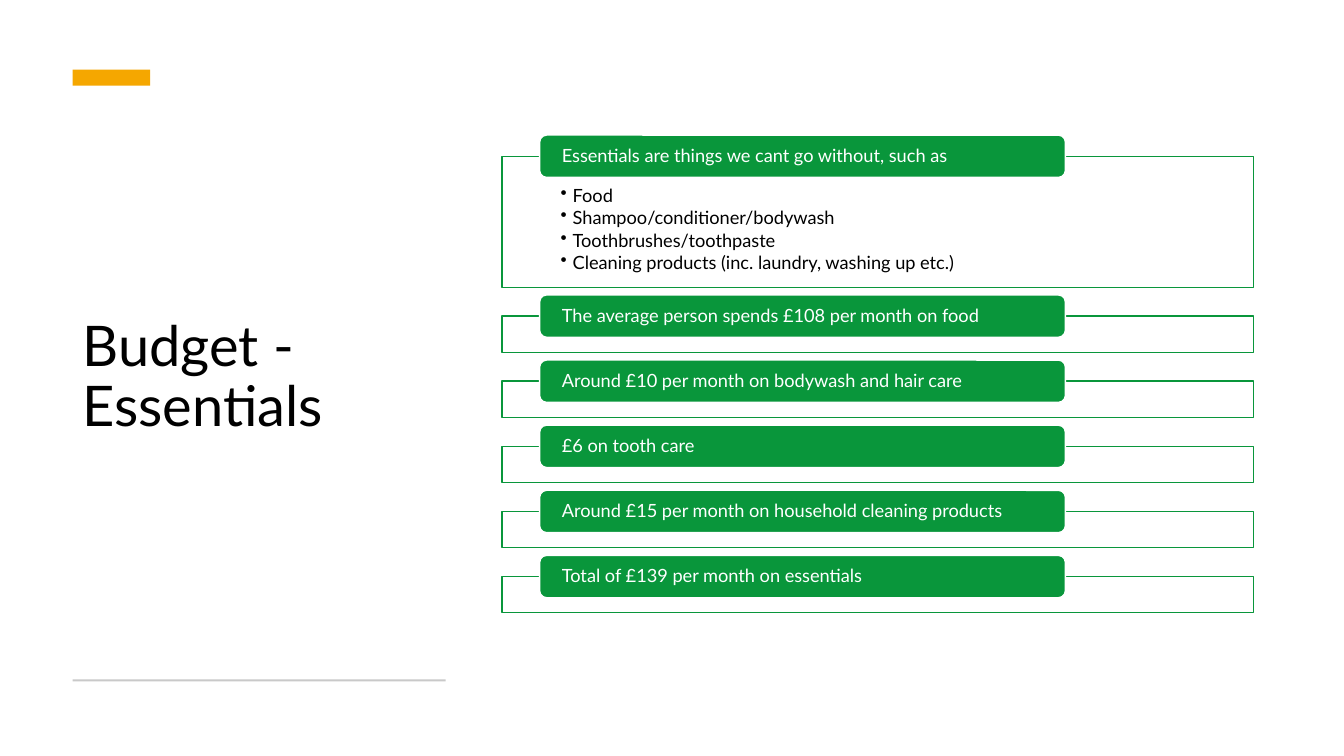
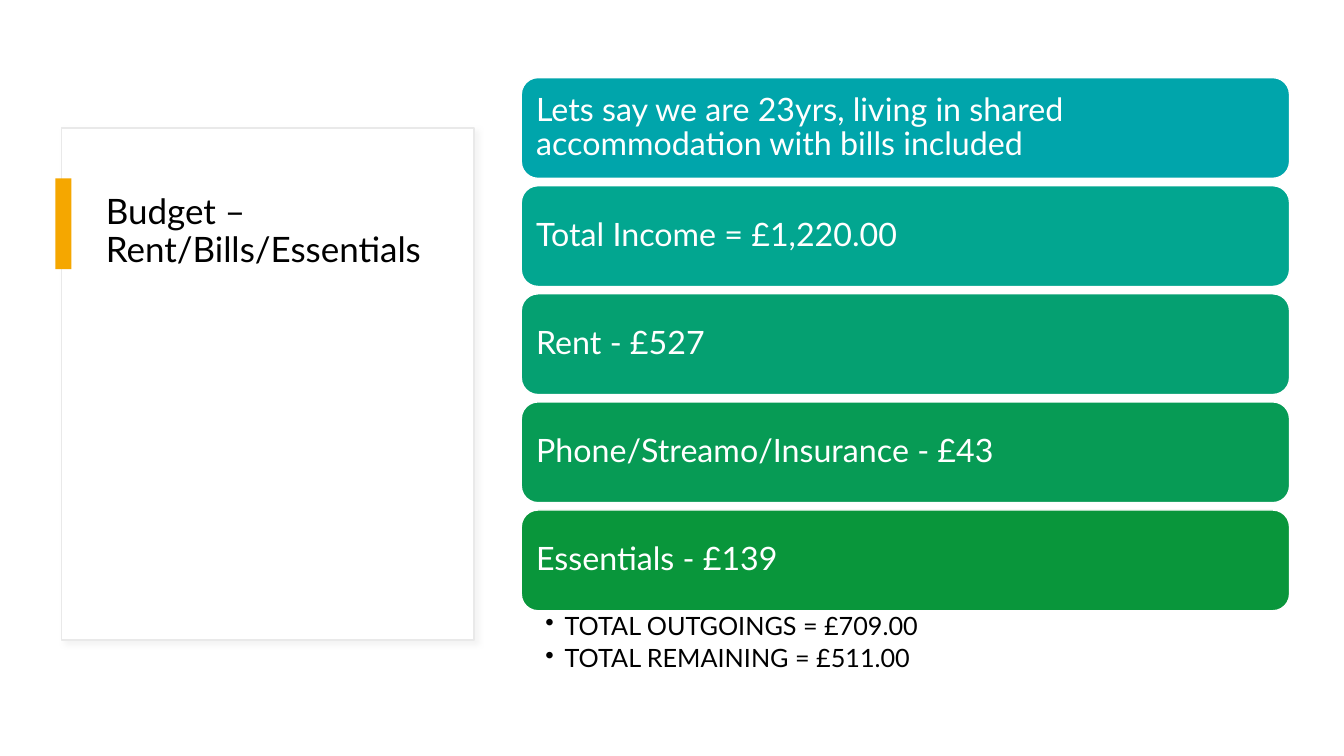
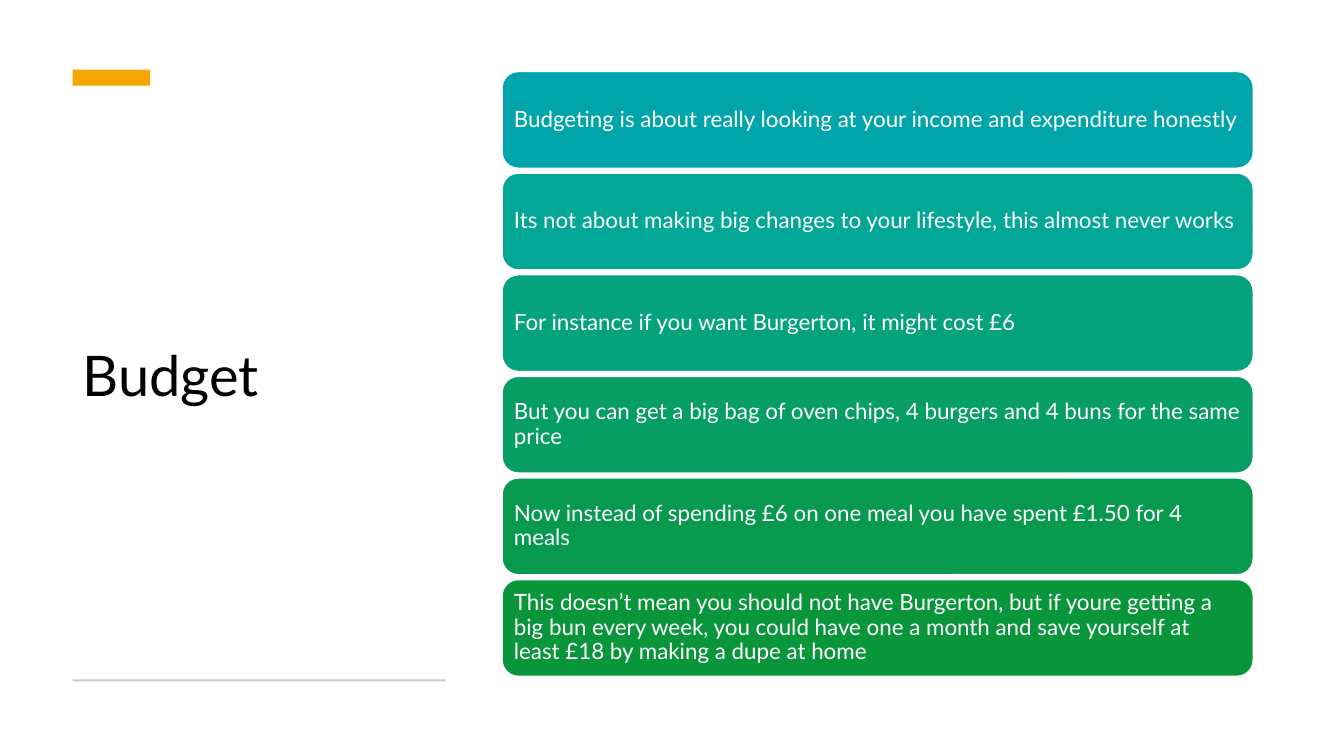
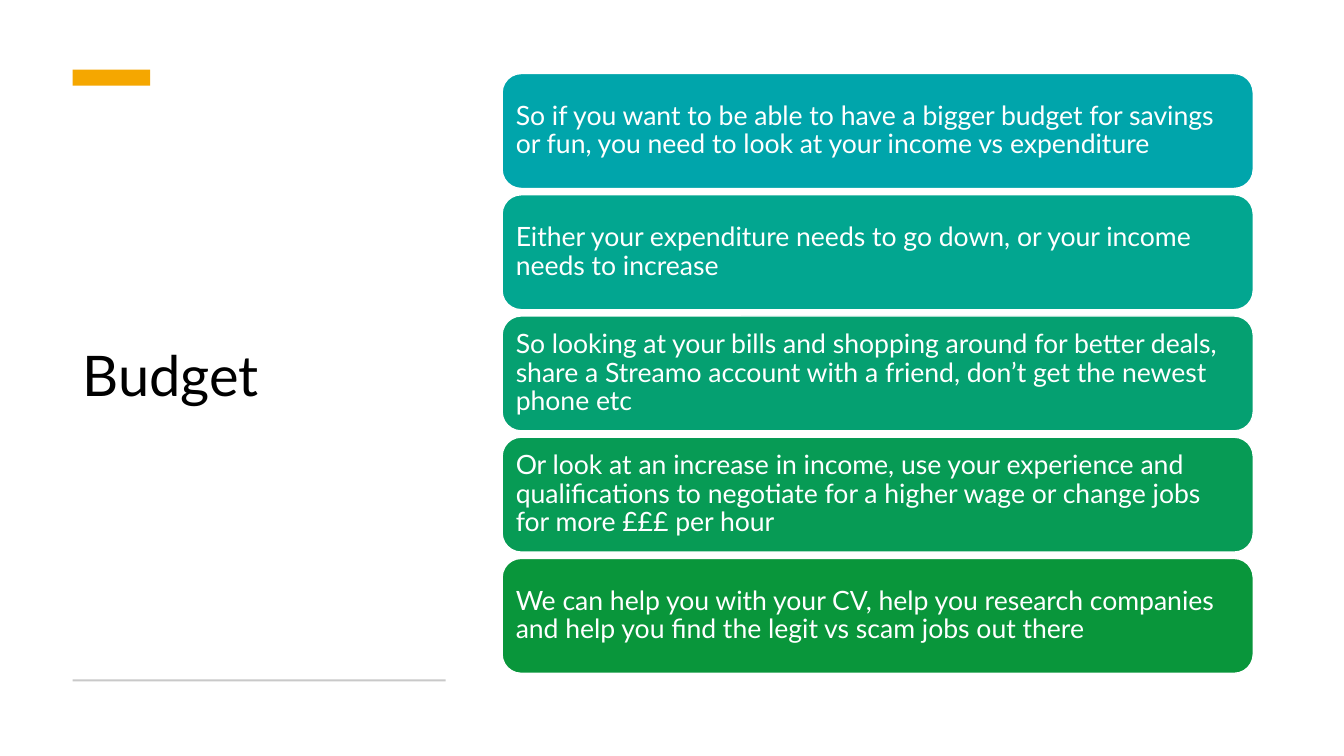
from colorsys import hls_to_rgb, rgb_to_hls
from dataclasses import dataclass

from lxml import etree
from pptx import Presentation
from pptx.dml.color import RGBColor
from pptx.enum.shapes import MSO_SHAPE
from pptx.enum.text import MSO_ANCHOR, MSO_AUTO_SIZE, PP_ALIGN
from pptx.oxml.ns import qn
from pptx.util import Inches, Pt

RECT, ROUNDED = MSO_SHAPE.RECTANGLE, MSO_SHAPE.ROUNDED_RECTANGLE
TOP, MIDDLE = MSO_ANCHOR.TOP, MSO_ANCHOR.MIDDLE
LEFT, NO_AUTOFIT = PP_ALIGN.LEFT, MSO_AUTO_SIZE.NONE
TITLE_ONLY = 5


@dataclass(frozen=True)
class Theme:
    font: str = "Lato"
    ink: str = "000000"
    paper: str = "FFFFFF"
    accent: str = "F5A700"
    rule: str = "C9C9C9"
    frame: str = "E9E9E9"
    shadow: str = "D9D9D9"
    teal: str = "00A5AB"
    green: str = "09963B"
    title_size: int = 40
    side_title_size: int = 25
    tab_size: int = 13
    total_size: int = 18
    leading: float = 0.9
    card_after: float = 0.35  # paragraph gaps are shares of the type size
    detail_after: float = 0.15
    total_after: float = 0.2


THEME = Theme()
SLIDE_WIDTH, SLIDE_HEIGHT = 13.33, 7.5
TITLE_LEFT, TITLE_WIDTH = 0.72, 3.7
BODY_LEFT, BODY_WIDTH = 4.98, 7.45

ESSENTIALS = [
    ("Essentials are things we cant go without, such as", [
        "Food",
        "Shampoo/conditioner/bodywash",
        "Toothbrushes/toothpaste",
        "Cleaning products (inc. laundry, washing up etc.)",
    ]),
    ("The average person spends £108 per month on food", []),
    ("Around £10 per month on bodywash and hair care", []),
    ("£6 on tooth care", []),
    ("Around £15 per month on household cleaning products", []),
    ("Total of £139 per month on essentials", []),
]

MONTH = [
    "Lets say we are 23yrs, living in shared accommodation with bills included",
    "Total Income = £1,220.00",
    "Rent - £527",
    "Phone/Streamo/Insurance - £43",
    "Essentials - £139",
]
TOTALS = ["TOTAL OUTGOINGS = £709.00", "TOTAL REMAINING = £511.00"]

HONEST_LOOK = [
    "Budgeting is about really looking at your income and expenditure honestly",
    "Its not about making big changes to your lifestyle, this almost never works",
    "For instance if you want Burgerton, it might cost £6",
    "But you can get a big bag of oven chips, 4 burgers and 4 buns for the same price",
    "Now instead of spending £6 on one meal you have spent £1.50 for 4 meals",
    "This doesn’t mean you should not have Burgerton, but if youre getting a big bun "
    "every week, you could have one a month and save yourself at least £18 by making "
    "a dupe at home",
]

BIGGER_BUDGET = [
    "So if you want to be able to have a bigger budget for savings or fun, you need to "
    "look at your income vs expenditure",
    "Either your expenditure needs to go down, or your income needs to increase",
    "So looking at your bills and shopping around for better deals, share a Streamo "
    "account with a friend, don’t get the newest phone etc",
    "Or look at an increase in income, use your experience and qualifications to "
    "negotiate for a higher wage or change jobs for more £££ per hour",
    "We can help you with your CV, help you research companies and help you find the "
    "legit vs scam jobs out there",
]


def rgb(colour):
    return RGBColor.from_string(colour)


def write(shape, paragraphs, *, size, color=THEME.ink, anchor=MIDDLE,
          insets=(0.1, 0.05, 0.1, 0.05), after=0, bullet_indent=0):
    """Fill a shape with paragraphs; insets run left, top, right, bottom."""
    frame = shape.text_frame
    frame.word_wrap = True
    frame.auto_size = NO_AUTOFIT
    frame.vertical_anchor = anchor
    (frame.margin_left, frame.margin_top,
     frame.margin_right, frame.margin_bottom) = map(Inches, insets)
    for index, text in enumerate(paragraphs):
        paragraph = frame.add_paragraph() if index else frame.paragraphs[0]
        paragraph.alignment = LEFT
        paragraph.line_spacing = THEME.leading
        paragraph.space_after = Pt(size * after)
        run = paragraph.add_run()
        run.text = text
        run.font.name, run.font.size = THEME.font, Pt(size)
        run.font.color.rgb = rgb(color)
        if bullet_indent:
            properties = paragraph._p.get_or_add_pPr()
            properties.set("marL", str(Inches(bullet_indent)))
            properties.set("indent", str(-Inches(bullet_indent)))
            etree.SubElement(properties, qn("a:buChar"), char="•")


def add_block(slide, box, fill, line=None, kind=RECT):
    block = slide.shapes.add_shape(kind, *map(Inches, box))
    block.shadow.inherit = False
    block.fill.solid()
    block.fill.fore_color.rgb = rgb(fill)
    if line:
        block.line.color.rgb = rgb(line)
        block.line.width = Pt(1)
    else:
        block.line.fill.background()
    return block


def cast_shadow(shape):
    effects = shape._element.spPr.find(qn("a:effectLst"))
    outer = etree.SubElement(effects, qn("a:outerShdw"), blurRad=str(Pt(4)),
                             dist=str(Pt(3)), dir=str(45 * 60000), rotWithShape="0")
    colour = etree.SubElement(outer, qn("a:srgbClr"), val=THEME.shadow)
    etree.SubElement(colour, qn("a:alpha"), val="30000")


def place_title(slide, text, box, size, anchor):
    title = slide.shapes.title
    title.left, title.top, title.width, title.height = map(Inches, box)
    write(title, [text], size=size, anchor=anchor)


def new_slide(deck):
    return deck.slides.add_slide(deck.slide_layouts[TITLE_ONLY])


def add_ruled_slide(deck, title):
    """Slide with a large title between an accent bar and a thin rule."""
    slide = new_slide(deck)
    place_title(slide, title, (TITLE_LEFT, 1.05, TITLE_WIDTH, 5.41),
                THEME.title_size, MIDDLE)
    add_block(slide, (TITLE_LEFT, 0.69, 0.77, 0.16), THEME.accent)
    add_block(slide, (TITLE_LEFT, 6.74, TITLE_WIDTH, 0.02), THEME.rule)
    return slide


def add_framed_slide(deck, title):
    """Slide with a small title inside a shadowed frame."""
    slide = new_slide(deck)
    frame = add_block(slide, (0.61, 1.27, 4.09, 5.08), THEME.paper, THEME.frame)
    cast_shadow(frame)
    slide.shapes._spTree.append(slide.shapes.title._element)
    place_title(slide, title, (0.95, 1.88, 3.39, 3.85), THEME.side_title_size, TOP)
    add_block(slide, (0.55, 1.77, 0.16, 0.9), THEME.accent)
    return slide


def hue_ramp(count):
    """Colours from teal to green in even steps of hue, lightness, saturation."""
    start, end = (rgb_to_hls(*(part / 255 for part in rgb(colour)))
                  for colour in (THEME.teal, THEME.green))
    for step in range(count):
        share = step / (count - 1)
        mixed = hls_to_rgb(*(a + (b - a) * share for a, b in zip(start, end)))
        yield "".join(f"{round(part * 255):02X}" for part in mixed)


def add_cards(slide, texts, *, top, bottom, height, size, inset,
              left=BODY_LEFT, width=BODY_WIDTH):
    pitch = (bottom - top - height) / (len(texts) - 1)
    for row, (text, fill) in enumerate(zip(texts, hue_ramp(len(texts)))):
        card = add_block(slide, (left, top + row * pitch, width, height),
                         fill, THEME.paper, ROUNDED)
        write(card, [text], size=size, color=THEME.paper,
              insets=(inset,) * 4, after=THEME.card_after)


def add_tabbed_panels(slide, sections, *, top, bottom, open_height, closed_height):
    """Outlined panels, taller where there are details, each with a tab on its top edge."""
    heights = [open_height if details else closed_height for _, details in sections]
    gap = (bottom - top - sum(heights)) / (len(sections) - 1)
    tab_left, tab_width, tab_height = BODY_LEFT + BODY_WIDTH / 20, BODY_WIDTH * 0.7, 0.42
    for (heading, details), height in zip(sections, heights):
        panel = add_block(slide, (BODY_LEFT, top, BODY_WIDTH, height),
                          THEME.paper, THEME.green)
        if details:
            write(panel, details, size=THEME.tab_size, anchor=TOP, bullet_indent=0.12,
                  insets=(0.58, 0.3, 0.58, 0.1), after=THEME.detail_after)
        tab = add_block(slide, (tab_left, top - tab_height / 2, tab_width, tab_height),
                        THEME.green, THEME.paper, ROUNDED)
        write(tab, [heading], size=THEME.tab_size, color=THEME.paper,
              insets=(0.2, 0, 0.2, 0), after=THEME.card_after)
        top += height + gap


def main():
    deck = Presentation()
    deck.slide_width, deck.slide_height = Inches(SLIDE_WIDTH), Inches(SLIDE_HEIGHT)

    essentials = add_ruled_slide(deck, "Budget - Essentials")
    add_tabbed_panels(essentials, ESSENTIALS, top=1.55, bottom=6.08,
                      open_height=1.3, closed_height=0.36)

    month = add_framed_slide(deck, "Budget – Rent/Bills/Essentials")
    cards_left, cards_width, cards_bottom = 5.17, 7.62, 6.06
    add_cards(month, MONTH, top=0.77, bottom=cards_bottom, height=1, size=23,
              inset=0.1, left=cards_left, width=cards_width)
    totals = month.shapes.add_textbox(
        *map(Inches, (cards_left, cards_bottom, cards_width, 0.68)))
    write(totals, TOTALS, size=THEME.total_size, anchor=TOP, bullet_indent=0.19,
          insets=(0.24, 0.03, 0.18, 0.03), after=THEME.total_after)

    add_cards(add_ruled_slide(deck, "Budget"), HONEST_LOOK,
              top=0.71, bottom=6.71, height=0.96, size=16, inset=0.07)
    add_cards(add_ruled_slide(deck, "Budget"), BIGGER_BUDGET,
              top=0.73, bottom=6.68, height=1.14, size=19, inset=0.08)

    deck.save("out.pptx")


if __name__ == "__main__":
    main()
